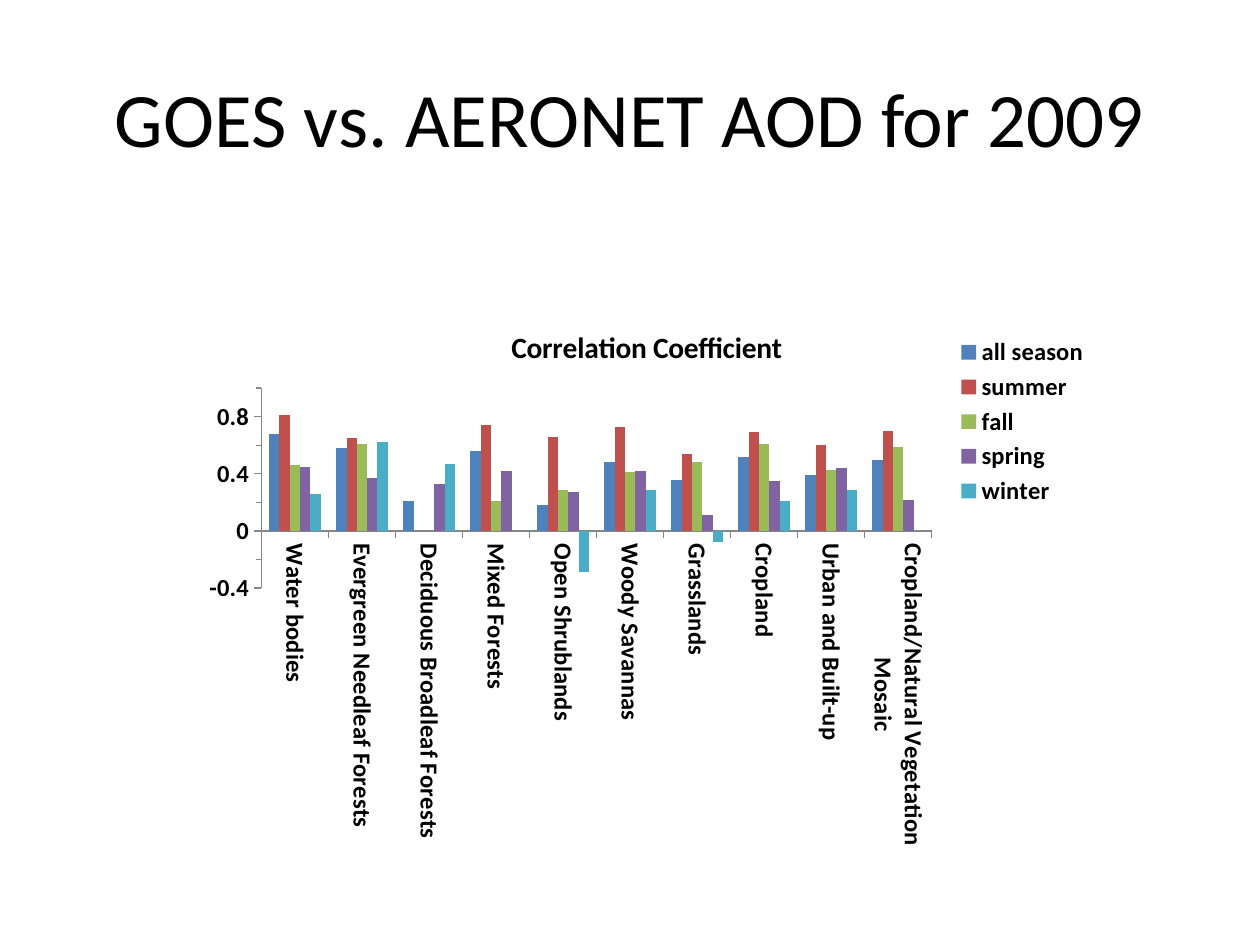
from lxml import etree
from pptx import Presentation
from pptx.chart.data import CategoryChartData
from pptx.dml.color import RGBColor
from pptx.enum.chart import XL_CHART_TYPE, XL_LEGEND_POSITION, XL_TICK_MARK
from pptx.enum.text import MSO_ANCHOR, PP_ALIGN
from pptx.oxml.ns import qn
from pptx.util import Inches, Pt

COLUMN = XL_CHART_TYPE.COLUMN_CLUSTERED
RIGHT = XL_LEGEND_POSITION.RIGHT
OUTSIDE = XL_TICK_MARK.OUTSIDE
CENTER = PP_ALIGN.CENTER
MIDDLE = MSO_ANCHOR.MIDDLE
FONT = "Calibri"
CATS = [
    "Water bodies", "Evergreen Needleaf Forests", "Deciduous Broadleaf Forests",
    "Mixed Forests", "Open Shrublands", "Woody Savannas", "Grasslands",
    "Cropland", "Urban and Built-up", "Cropland/Natural Vegetation\nMosaic",
]
SEASONS = [
    ("all season", "4F81BD", [0.68, 0.58, 0.21, 0.56, 0.18, 0.48, 0.36, 0.52, 0.39, 0.5]),
    ("summer", "C0504D", [0.81, 0.65, None, 0.74, 0.66, 0.73, 0.54, 0.69, 0.6, 0.7]),
    ("fall", "9BBB59", [0.46, 0.61, None, 0.21, 0.29, 0.41, 0.48, 0.61, 0.43, 0.59]),
    ("spring", "8064A2", [0.45, 0.37, 0.33, 0.42, 0.27, 0.42, 0.11, 0.35, 0.44, 0.22]),
    ("winter", "4BACC6", [0.26, 0.62, 0.47, None, -0.29, 0.29, -0.08, 0.21, 0.29, None]),
]


def color(code):
    return RGBColor.from_string(code)


def style(font, size, bold):
    font.name = FONT
    font.size = Pt(size)
    font.bold = bold
    font.color.rgb = color("000000")


def place(node, before, inner=False, **box):
    for old in node.findall(qn("c:layout")):
        node.remove(old)
    layout = etree.Element(qn("c:layout"))
    manual = etree.SubElement(layout, qn("c:manualLayout"))
    if inner:
        etree.SubElement(manual, qn("c:layoutTarget")).set("val", "inner")
    for key in ("xMode", "yMode"):
        etree.SubElement(manual, qn("c:" + key)).set("val", "edge")
    for key, val in box.items():
        etree.SubElement(manual, qn("c:" + key)).set("val", str(val))
    node.find(qn(before)).addprevious(layout)


def add_title(slide, left, top, width, height):
    title = slide.shapes.title
    title.left, title.top = Inches(left), Inches(top)
    title.width, title.height = Inches(width), Inches(height)
    frame = title.text_frame
    frame.text = "GOES vs. AERONET AOD for 2009"
    frame.vertical_anchor = MIDDLE
    para = frame.paragraphs[0]
    para.alignment = CENTER
    style(para.runs[0].font, 44, False)


def set_axes(chart):
    cat, val = chart.category_axis, chart.value_axis
    for axis in (cat, val):
        axis.has_major_gridlines = False
        axis.major_tick_mark = OUTSIDE
        axis.format.line.color.rgb = color("868686")
        axis.format.line.width = Pt(0.75)
        style(axis.tick_labels.font, 14, True)
    val.minimum_scale, val.maximum_scale = -0.4, 1
    val.major_unit, val.minor_unit = 0.4, 0.2
    val.minor_tick_mark = OUTSIDE
    val.tick_labels.number_format = "General"
    val.tick_labels.number_format_is_linked = False
    cat.tick_labels.offset = 100
    body = cat._element.find(qn("c:txPr")).find(qn("a:bodyPr"))
    body.set("rot", "5400000")
    body.set("vert", "horz")


def add_chart(slide, left, top, width, height):
    data = CategoryChartData()
    data.categories = CATS
    for name, _, vals in SEASONS:
        data.add_series(name, vals)
    box = [Inches(n) for n in (left, top, width, height)]
    chart = slide.shapes.add_chart(COLUMN, *box, data).chart
    style(chart.font, 14, True)
    chart.has_title = True
    frame = chart.chart_title.text_frame
    frame.text = "Correlation Coefficient"
    style(frame.paragraphs[0].runs[0].font, 16.8, True)
    chart.chart_title.include_in_layout = False
    place(chart.chart_title._element, "c:overlay", x=0.35, y=0.03)
    chart.has_legend = True
    legend = chart.legend
    legend.position = RIGHT
    legend.include_in_layout = False
    style(legend.font, 14, True)
    place(legend._element, "c:overlay", x=0.84, y=0.05, w=0.16, h=0.32)
    plot = chart.plots[0]
    plot.gap_width, plot.overlap = 150, 0
    plot.vary_by_categories = False
    for series, (_, code, _) in zip(plot.series, SEASONS):
        series.invert_if_negative = False
        series.format.fill.solid()
        series.format.fill.fore_color.rgb = color(code)
    set_axes(chart)
    area = chart._chartSpace.chart.plotArea
    place(area, "c:barChart", True, x=0.08, y=0.15, w=0.74, h=0.36)


def main():
    deck = Presentation()
    deck.slide_width, deck.slide_height = Inches(10), Inches(7.5)
    slide = deck.slides.add_slide(deck.slide_layouts[5])
    add_title(slide, 0.5, 0.3, 9, 1.25)
    add_chart(slide, 1.5, 2.42, 7.19, 4.41)
    deck.save("out.pptx")


if __name__ == "__main__":
    main()
